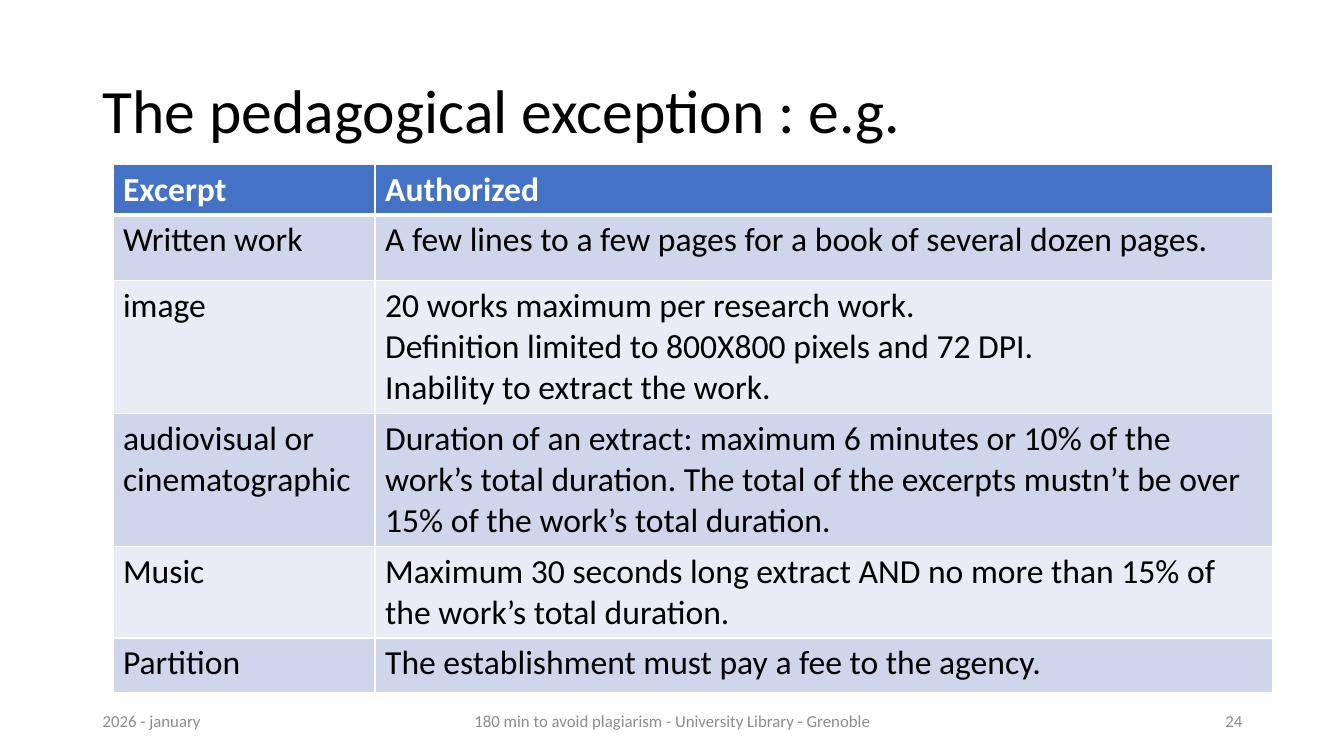
from dataclasses import dataclass

from lxml.etree import SubElement
from pptx import Presentation
from pptx.dml.color import RGBColor
from pptx.enum.text import MSO_ANCHOR as Anchor, PP_ALIGN as Align
from pptx.oxml.ns import qn
from pptx.util import Inches, Pt


@dataclass(frozen=True)
class Theme:
    font: str = "Calibri"
    title_size: int = 44
    table_size: int = 24
    footer_size: int = 12
    text: str = "000000"
    muted: str = "8C8C8C"
    white: str = "FFFFFF"
    header: str = "4472C4"
    bands: tuple = ("CFD5EA", "E9EBF5")
    border: int = 1
    header_border: int = 3


THEME = Theme()

COLUMN_WIDTHS = (2.6, 8.9)
ROW_HEIGHTS = (0.5, 0.65, 1.32, 1.32, 0.91, 0.54)
ROWS = (
    ("Excerpt", "Authorized"),
    ("Written work", "A few lines to a few pages for a book of several dozen pages."),
    ("image", "20 works maximum per research work.\n"
              "Definition limited to 800X800 pixels and 72 DPI.\n"
              "Inability to extract the work."),
    ("audiovisual or cinematographic",
     "Duration of an extract: maximum 6 minutes or 10% of the work’s total duration. "
     "The total of the excerpts mustn’t be over 15% of the work’s total duration."),
    ("Music", "Maximum 30 seconds long extract AND no more than 15% of "
              "the work’s total duration."),
    ("Partition", "The establishment must pay a fee to the agency."),
)

FOOTER_TOP, FOOTER_HEIGHT = 6.95, 0.4
FOOTERS = (
    ("2026 - january", 0.92, 3, Align.LEFT),
    ("180 min to avoid plagiarism - University Library - Grenoble", 4.42, 4.5, Align.CENTER),
    ("24", 9.42, 3, Align.RIGHT),
)


def add_runs(paragraph, text, size, color, bold=False):
    """Add one run per line, with line breaks between them."""
    for index, line in enumerate(text.split("\n")):
        if index:
            paragraph.add_line_break()
        run = paragraph.add_run()
        run.text = line
        run.font.name = THEME.font
        run.font.size = Pt(size)
        run.font.bold = bold
        run.font.color.rgb = RGBColor.from_string(color)


def add_text(slide, text, left, top, width, height, size, color, align=Align.LEFT):
    box = slide.shapes.add_textbox(Inches(left), Inches(top), Inches(width), Inches(height))
    frame = box.text_frame
    frame.word_wrap = True
    frame.vertical_anchor = Anchor.MIDDLE
    paragraph = frame.paragraphs[0]
    paragraph.alignment = align
    add_runs(paragraph, text, size, color)
    return paragraph


def set_borders(cell, top, bottom):
    """Draw white borders; top and bottom are widths in points."""
    properties = cell._tc.get_or_add_tcPr()
    widths = {"a:lnL": THEME.border, "a:lnR": THEME.border, "a:lnT": top, "a:lnB": bottom}
    for tag, width in widths.items():
        line = SubElement(properties, qn(tag), w=str(Pt(width)))
        fill = SubElement(line, qn("a:solidFill"))
        SubElement(fill, qn("a:srgbClr"), val=THEME.white)


def fill_cell(cell, text, row):
    is_header = row == 0
    set_borders(cell,
                top=THEME.header_border if row == 1 else THEME.border,
                bottom=THEME.header_border if is_header else THEME.border)
    cell.fill.solid()
    color = THEME.header if is_header else THEME.bands[(row - 1) % 2]
    cell.fill.fore_color.rgb = RGBColor.from_string(color)
    add_runs(cell.text_frame.paragraphs[0], text, THEME.table_size,
             THEME.white if is_header else THEME.text, bold=is_header)


def add_excerpt_table(slide, left, top):
    frame = slide.shapes.add_table(
        len(ROWS), len(COLUMN_WIDTHS), Inches(left), Inches(top),
        Inches(sum(COLUMN_WIDTHS)), Inches(sum(ROW_HEIGHTS)))
    table = frame.table
    for column, width in zip(table.columns, COLUMN_WIDTHS):
        column.width = Inches(width)
    for row, (texts, height) in enumerate(zip(ROWS, ROW_HEIGHTS)):
        table.rows[row].height = Inches(height)
        for column, text in enumerate(texts):
            fill_cell(table.cell(row, column), text, row)


def main():
    presentation = Presentation()
    presentation.slide_width = Inches(13.33)
    presentation.slide_height = Inches(7.5)
    slide = presentation.slides.add_slide(presentation.slide_layouts[6])

    # Title
    title = add_text(slide, "The pedagogical exception : e.g.", 0.92, 0.4, 11.5, 1.45,
                     THEME.title_size, THEME.text)
    title.line_spacing = 0.9

    # Table of authorized excerpts
    add_excerpt_table(slide, 1.12, 1.63)

    # Footer
    for text, left, width, align in FOOTERS:
        add_text(slide, text, left, FOOTER_TOP, width, FOOTER_HEIGHT,
                 THEME.footer_size, THEME.muted, align)

    presentation.save("out.pptx")


if __name__ == "__main__":
    main()
